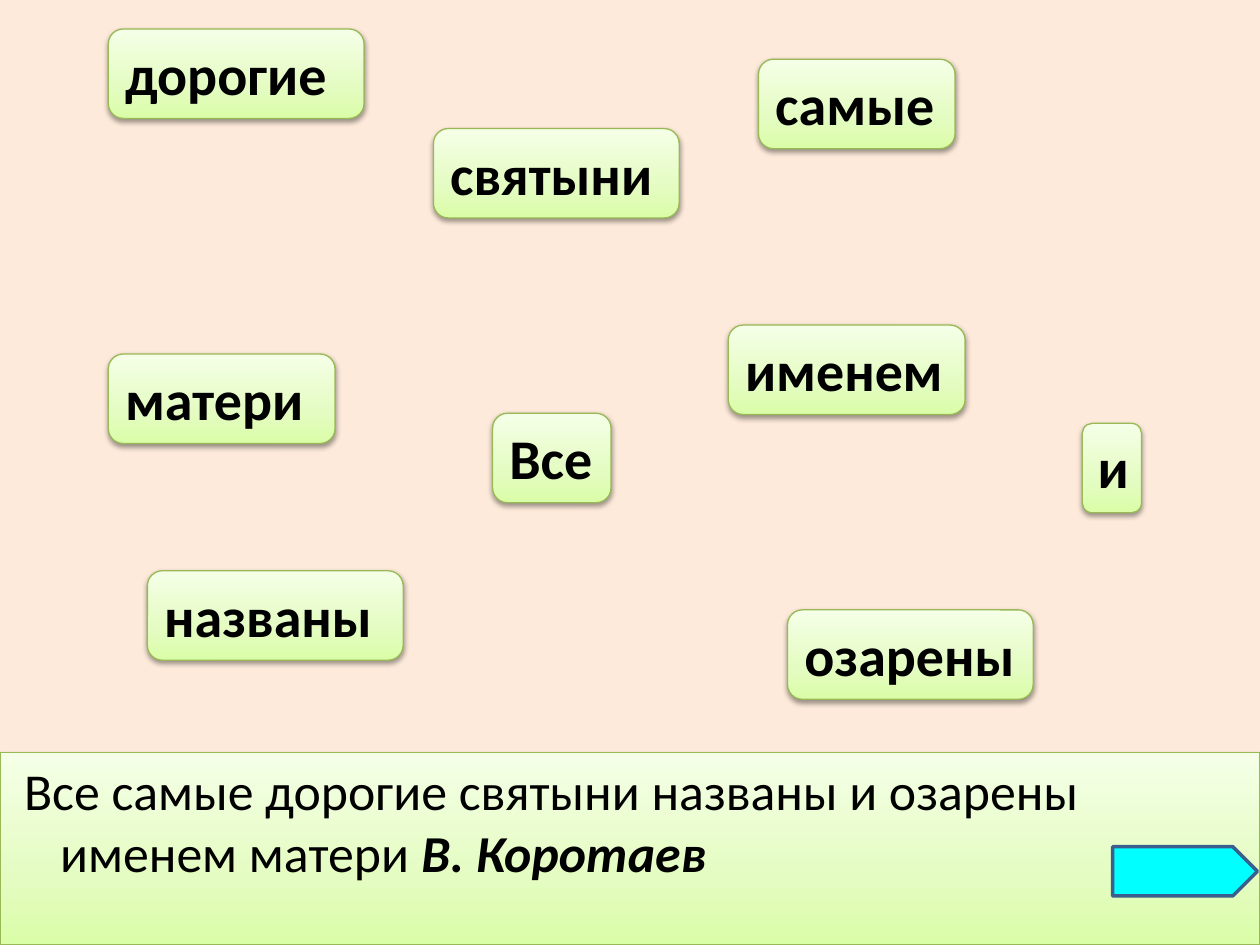
from lxml import etree
from pptx import Presentation
from pptx.dml.color import RGBColor
from pptx.enum import shapes, text
from pptx.oxml import parse_xml
from pptx.oxml.ns import nsdecls, qn
from pptx.util import Inches, Pt

PEACH = RGBColor(0xFD, 0xEA, 0xDA)
GREEN_LINE = RGBColor(0x98, 0xB9, 0x55)
BLACK = RGBColor(0, 0, 0)
CYAN = RGBColor(0, 0xFF, 0xFF)
NAVY = RGBColor(0x3A, 0x5F, 0x8C)
GREEN_STOPS = (
    (0, RGBColor(0xDA, 0xFD, 0xA7)),
    (35, RGBColor(0xE4, 0xFC, 0xC2)),
    (100, RGBColor(0xF5, 0xFF, 0xE7)),
)
FONT = "Calibri"
CARD_HEIGHT = 0.71

# word, left, top, width
WORD_CARDS = (
    ("Все", 3.91, 3.28, 0.94),
    ("самые", 6.02, 0.47, 1.56),
    ("дорогие", 0.86, 0.23, 2.03),
    ("святыни", 3.44, 1.02, 1.95),
    ("названы", 1.17, 4.53, 2.03),
    ("и", 8.59, 3.36, 0.47),
    ("озарены", 6.25, 4.84, 1.95),
    ("именем", 5.78, 2.58, 1.88),
    ("матери", 0.86, 2.81, 1.8),
)


def add_box(slide, kind, left, top, width, height, line_color, line_width):
    box = slide.shapes.add_shape(
        kind, Inches(left), Inches(top), Inches(width), Inches(height))
    box.shadow.inherit = False
    box.line.color.rgb = line_color
    box.line.width = Pt(line_width)
    return box


def fill_green(box):
    """Three-stop gradient, darkest at the bottom."""
    box.fill.gradient()
    box.fill.gradient_angle = 90
    stops = box.element.spPr.find(".//" + qn("a:gsLst"))
    for stop in list(stops):
        stops.remove(stop)
    for percent, color in GREEN_STOPS:
        stop = etree.SubElement(stops, qn("a:gs"), pos=str(percent * 1000))
        etree.SubElement(stop, qn("a:srgbClr"), val=str(color))


def add_shadow(box):
    effects = box.element.spPr.find(qn("a:effectLst"))
    effects.append(parse_xml(
        f'<a:outerShdw {nsdecls("a")} blurRad="{Pt(3.1)}" dist="{Pt(1.6)}" '
        'dir="5400000" rotWithShape="0"><a:srgbClr val="000000">'
        '<a:alpha val="38000"/></a:srgbClr></a:outerShdw>'))


def add_green_box(slide, kind, left, top, width, height):
    box = add_box(slide, kind, left, top, width, height, GREEN_LINE, 0.75)
    fill_green(box)
    add_shadow(box)
    box.text_frame.word_wrap = True
    box.text_frame.vertical_anchor = text.MSO_ANCHOR.TOP
    box.text_frame.paragraphs[0].alignment = text.PP_ALIGN.LEFT
    return box


def add_run(paragraph, words, size, bold=False, italic=False):
    run = paragraph.add_run()
    run.text = words
    run.font.name = FONT
    run.font.size = Pt(size)
    run.font.bold = bold
    run.font.italic = italic
    run.font.color.rgb = BLACK


def add_answer(slide):
    panel = add_green_box(
        slide, shapes.MSO_SHAPE.RECTANGLE, 0, 5.97, 10, 1.53)
    answer = panel.text_frame.paragraphs[0]
    answer.space_before = Pt(6)
    indents = answer._p.get_or_add_pPr()
    indents.set("marL", str(Inches(0.38)))
    indents.set("indent", str(-Inches(0.38)))
    add_run(answer, " Все самые дорогие святыни названы и озарены именем матери",
            size=29.6)
    add_run(answer, " В. Коротаев", size=29.6, bold=True, italic=True)


def add_word_card(slide, word, left, top, width):
    card = add_green_box(slide, shapes.MSO_SHAPE.ROUNDED_RECTANGLE,
                         left, top, width, CARD_HEIGHT)
    card.text_frame.auto_size = text.MSO_AUTO_SIZE.SHAPE_TO_FIT_TEXT
    add_run(card.text_frame.paragraphs[0], word, size=32, bold=True)


def add_next_arrow(slide):
    arrow = add_box(slide, shapes.MSO_SHAPE.PENTAGON,
                    8.83, 6.72, 1.15, 0.39, NAVY, 2)
    arrow.fill.solid()
    arrow.fill.fore_color.rgb = CYAN


def main():
    deck = Presentation()
    deck.slide_width, deck.slide_height = Inches(10), Inches(7.5)
    slide = deck.slides.add_slide(deck.slide_layouts[6])
    slide.background.fill.solid()
    slide.background.fill.fore_color.rgb = PEACH
    add_answer(slide)
    for card in WORD_CARDS:
        add_word_card(slide, *card)
    add_next_arrow(slide)
    deck.save("out.pptx")


if __name__ == "__main__":
    main()
